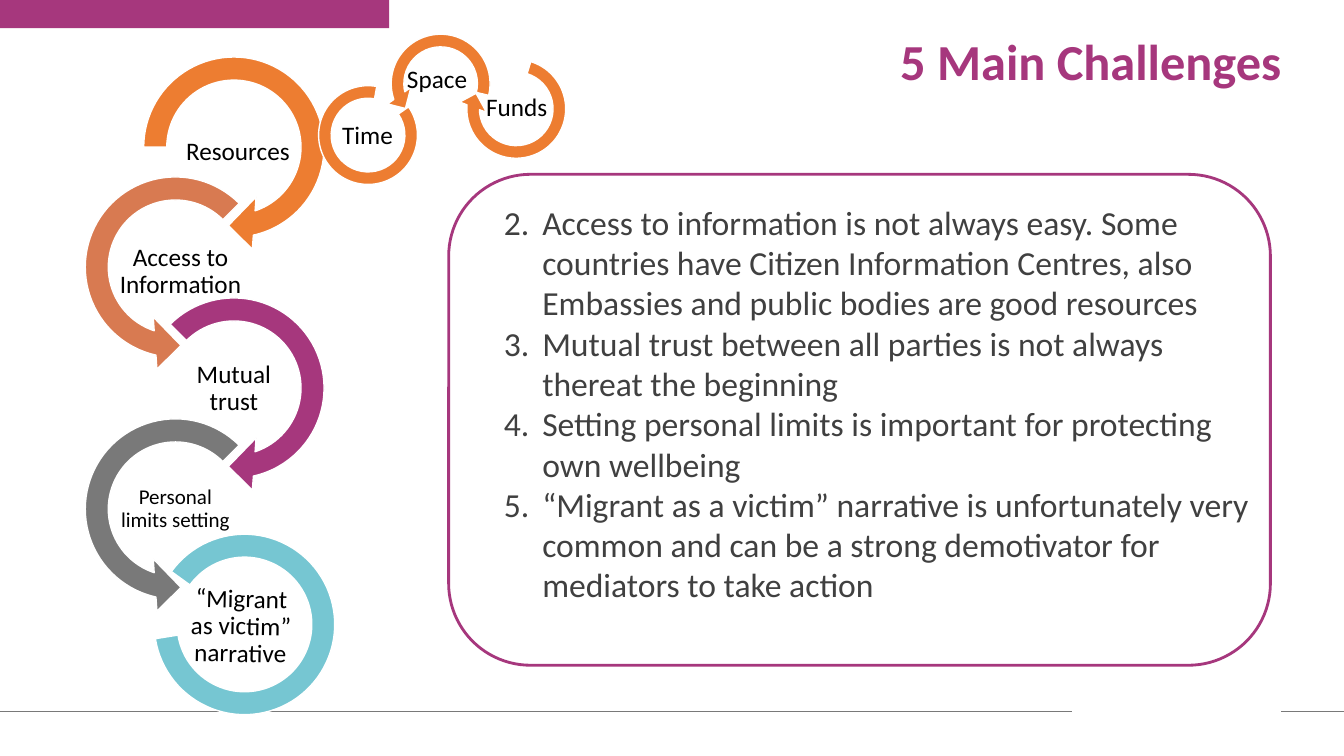
from lxml import etree
from pptx import Presentation, util as u
from pptx.dml.color import RGBColor
from pptx.enum import shapes, text
from pptx.oxml.ns import qn

KIND = shapes.MSO_SHAPE
PLUM, ORANGE, RUST = "A6377D", "ED7D31", "D87A51"
GREY, TEAL, WHITE = "797979", "76C6D2", "FFFFFF"
BLACK, DARK = "000000", "404040"

# Ring kinds: preset shape and its adjustments
RIGHT = (KIND.CIRCULAR_ARROW, (0.11, 11.423, 45, 135, 0.125))
START = (KIND.CIRCULAR_ARROW, (0.11, 11.423, 45, 108, 0.125))
LEFT = (KIND.LEFT_CIRCULAR_ARROW, (0.11, 11.423, 63, 189, 0.125))
ARC = (KIND.BLOCK_ARC, (135, 108, 0.127))


def color(code):
    return RGBColor.from_string(code)


def write(para, words, size=18, tint=BLACK, bold=False, center=False, lead=None):
    run = para.add_run()
    run.text = words
    font = run.font
    font.name, font.size, font.bold = "Calibri", u.Pt(size), bold
    font.color.rgb = color(tint)
    para.alignment = text.PP_ALIGN.CENTER if center else text.PP_ALIGN.LEFT
    if lead:
        para.line_spacing = lead


class Page:
    def __init__(self, slide):
        self.items = slide.shapes

    def shape(self, kind, box, fill=None, line=None, width=1.0, turn=0, adjust=()):
        item = self.items.add_shape(kind, *map(u.Inches, box))
        item.shadow.inherit = False
        item.rotation = turn
        for i, value in enumerate(adjust):
            item.adjustments[i] = value
        if fill:
            item.fill.solid()
            item.fill.fore_color.rgb = color(fill)
        else:
            item.fill.background()
        if line:
            item.line.color.rgb = color(line)
            item.line.width = u.Pt(width)
        else:
            item.line.fill.background()

    def ring(self, kind, left, top, side, fill, turn=0):
        preset, adjust = kind
        self.shape(preset, (left, top, side, side), fill, WHITE, 1, turn, adjust)

    def line(self, start, end, y):
        item = self.items.add_connector(
            shapes.MSO_CONNECTOR.STRAIGHT, *map(u.Inches, (start, y, end, y)))
        item.line.color.rgb = color(GREY)
        item.line.width = u.Pt(0.5)
        etree.SubElement(item._element.spPr, qn("a:effectLst"))

    def frame(self, box, turn=0):
        item = self.items.add_textbox(*map(u.Inches, box))
        item.rotation = turn
        item.text_frame.word_wrap = True
        return item.text_frame

    def label(self, words, box, size=18, turn=0):
        frame = self.frame(box, turn)
        frame.vertical_anchor = text.MSO_ANCHOR.MIDDLE
        frame.margin_left = frame.margin_right = u.Inches(0.01)
        frame.margin_top = frame.margin_bottom = u.Inches(0.01)
        write(frame.paragraphs[0], words, size, center=True, lead=0.9)

    def title(self, words, box):
        write(self.frame(box).paragraphs[0], words, 36, PLUM, True, lead=0.9)

    def steps(self, points, box, first):
        frame = self.frame(box)
        for i, words in enumerate(points):
            para = frame.add_paragraph() if i else frame.paragraphs[0]
            props = para._p.get_or_add_pPr()
            props.set("marL", str(u.Inches(0.38)))
            props.set("indent", str(-u.Inches(0.38)))
            etree.SubElement(props, qn("a:buFont"), typeface="+mj-lt")
            etree.SubElement(props, qn("a:buAutoNum"),
                             type="arabicPeriod", startAt=str(first))
            write(para, words, 24, DARK)


def main():
    deck = Presentation()
    deck.slide_width, deck.slide_height = u.Inches(13.33), u.Inches(7.5)
    page = Page(deck.slides.add_slide(deck.slide_layouts[6]))

    # Top band, footer rules and title
    page.shape(KIND.RECTANGLE, (0, 0, 3.86, 0.28), PLUM)
    page.line(10.63, 0, 7.06)
    page.line(13.33, 12.71, 7.06)
    page.title("5 Main Challenges", (8.83, 0.32, 4.32, 1.18))

    # Chain of challenges, then the chain of resources
    big, small = (1.16, 0.58), (0.63, 0.32)
    chain = [
        (START, 1.28, 0.42, 2.08, ORANGE, 0, "Resources", (1.78, 1.22, *big), 18, 0),
        (LEFT, 0.7, 1.61, 2.08, RUST, 0,
         "Access to Information", (0.99, 2.41, 1.6, 0.58), 18, 0),
        (RIGHT, 1.28, 2.81, 2.08, PLUM, 0, "Mutual trust", (1.74, 3.57, *big), 18, 0),
        (LEFT, 0.7, 4.01, 2.08, GREY, 0,
         "Personal limits setting", (1.16, 4.76, *big), 15, 0),
        (ARC, 1.53, 5.3, 1.79, TEAL, 350.9,
         "“Migrant as victim” narrative", (1.81, 5.93, *big), 18, 1.3),
        (START, 4.55, 0.51, 1.14, ORANGE, 107.1, "Funds", (4.81, 0.91, *small), 18, 0),
        (LEFT, 3.8, 0.26, 1.14, ORANGE, 58.8, "Space", (4.02, 0.64, *small), 18, 0),
        (ARC, 3.16, 0.85, 0.98, ORANGE, 100.2, "Time", (3.33, 1.19, *small), 18, 0),
    ]
    for kind, left, top, side, fill, turn, words, box, size, tilt in chain:
        page.ring(kind, left, top, side, fill, turn)
        page.label(words, box, size, tilt)

    # Numbered notes in a rounded frame
    page.steps([
        "Access to information is not always easy. Some countries have Citizen "
        "Information Centres, also Embassies and public bodies are good resources",
        "Mutual trust between all parties is not always thereat the beginning",
        "Setting personal limits is important for protecting own wellbeing",
        "“Migrant as a victim” narrative is unfortunately very common and can be "
        "a strong demotivator for mediators to take action",
    ], (4.9, 1.95, 7.62, 4.14), 2)
    page.shape(KIND.ROUNDED_RECTANGLE, (4.45, 1.73, 8.15, 4.87), line=PLUM, width=2)

    deck.save("out.pptx")


if __name__ == "__main__":
    main()
